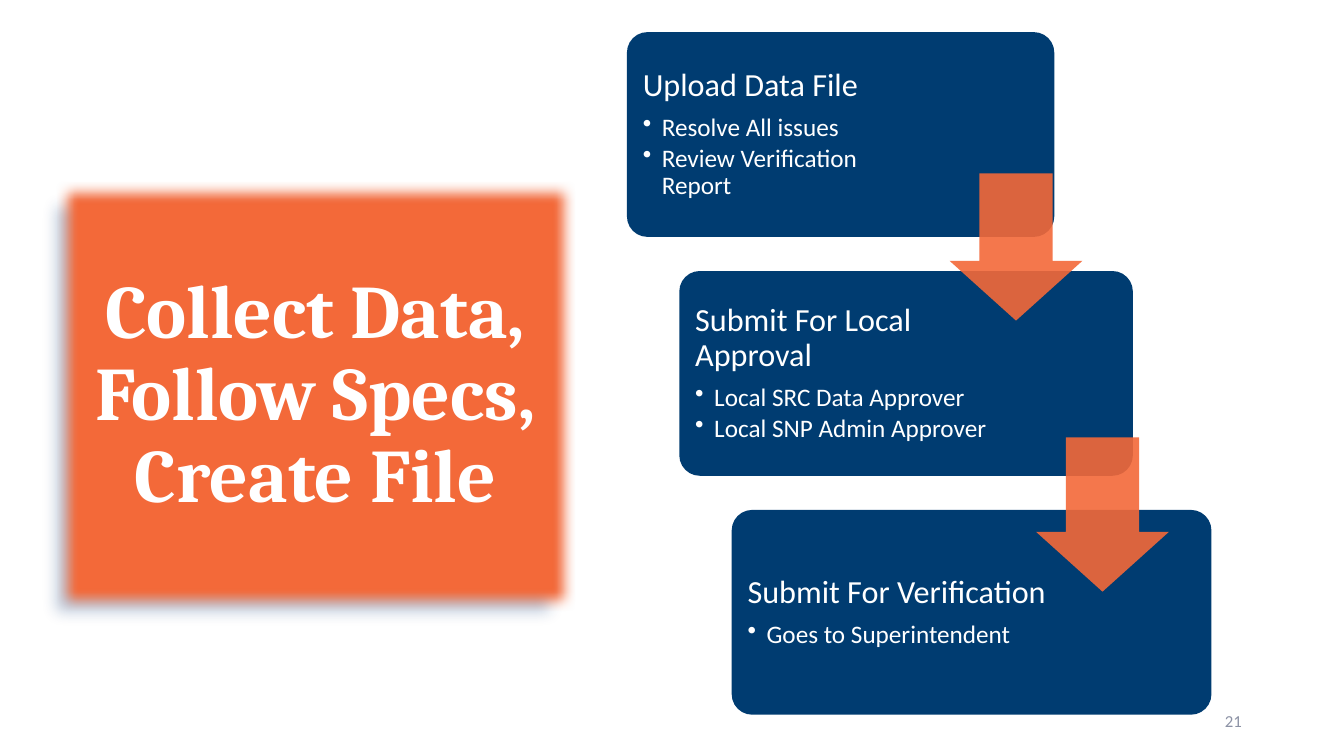
from dataclasses import dataclass

import pptx
import pptx.dml.color
import pptx.enum.shapes
import pptx.enum.text
import pptx.oxml
import pptx.oxml.ns
import pptx.util
from pptx.util import Cm, Pt

SHAPE = pptx.enum.shapes.MSO_SHAPE
ALIGN = pptx.enum.text.PP_ALIGN
ANCHOR = pptx.enum.text.MSO_ANCHOR
qn = pptx.oxml.ns.qn


@dataclass(frozen=True)
class Theme:
    navy: str = "003C71"
    orange: str = "F36939"
    white: str = "FFFFFF"
    gray: str = "8C92A5"
    shadow: str = "1A4480"
    body_font: str = "Calibri"
    title_font: str = "Cambria"
    title_size: int = 54
    heading_size: int = 23
    bullet_size: int = 18
    number_size: int = 12


THEME = Theme()

# heading, bullets, width of the text column in cm
STEPS = [
    ("Upload Data File",
     ["Resolve All issues", "Review Verification Report"], 7.44),
    ("Submit For Local Approval",
     ["Local SRC Data Approver", "Local SNP Admin Approver"], 8.08),
    ("Submit For Verification", ["Goes to Superintendent"], 8.56),
]
# left, top, width, height in cm, relative to the staircase
ARROWS = [(8.13, 3.56, 3.35, 3.71), (10.31, 10.21, 3.35, 3.89)]


def rgb(color):
    return pptx.dml.color.RGBColor.from_string(color)


def add_effect_xml(parent, xml):
    namespace = pptx.oxml.ns.nsdecls("a")
    parent.append(pptx.oxml.parse_xml(xml.replace(" ", f" {namespace} ", 1)))


def set_opacity(color_parent, percent):
    color = next(color_parent.iter(qn("a:srgbClr")))
    add_effect_xml(color, f'<a:alpha val="{percent * 1000}"/>')


def add_filled(slide, kind, box, color, adjustments=()):
    """Add a flat preset shape without an outline."""
    shape = slide.shapes.add_shape(kind, *box)
    shape.shadow.inherit = False
    shape.fill.solid()
    shape.fill.fore_color.rgb = rgb(color)
    shape.line.fill.background()
    for index, value in enumerate(adjustments):
        shape.adjustments[index] = value
    return shape


def prepare_frame(frame, inset):
    frame.word_wrap = True
    frame.auto_size = pptx.enum.text.MSO_AUTO_SIZE.NONE
    frame.vertical_anchor = ANCHOR.MIDDLE
    frame.margin_left = frame.margin_right = inset
    frame.margin_top = frame.margin_bottom = inset


def add_run(paragraph, text, font, size, color, bold=False):
    run = paragraph.add_run()
    run.text = text
    run.font.name = font
    run.font.size = Pt(size)
    run.font.bold = bold
    run.font.color.rgb = rgb(color)


def set_spacing(paragraph, after_percent):
    """Set tight lines and a space after in percent of the type size."""
    paragraph.line_spacing = 0.9
    paragraph.space_before = Pt(0)
    paragraph.space_after = Pt(0)
    after = next(paragraph._p.iter(qn("a:spcAft")))
    after.remove(after[0])
    add_effect_xml(after, f'<a:spcPct val="{after_percent * 1000}"/>')


def add_bullet(paragraph):
    properties = paragraph._p.get_or_add_pPr()
    properties.set("marL", str(Cm(0.48)))
    properties.set("indent", str(-Cm(0.48)))
    add_effect_xml(properties, '<a:buChar char="•"/>')


def add_step(slide, left, top, width, height, step):
    heading, bullets, text_width = step
    add_filled(slide, SHAPE.ROUNDED_RECTANGLE, (left, top, width, height),
               THEME.navy, [0.1])
    pad = Cm(0.15)
    frame = slide.shapes.add_textbox(
        left + pad, top + pad, Cm(text_width), height - 2 * pad).text_frame
    prepare_frame(frame, Cm(0.25))
    paragraph = frame.paragraphs[0]
    set_spacing(paragraph, 35)
    add_run(paragraph, heading, THEME.body_font, THEME.heading_size, THEME.white)
    for bullet in bullets:
        paragraph = frame.add_paragraph()
        paragraph.level = 1
        set_spacing(paragraph, 15)
        add_bullet(paragraph)
        add_run(paragraph, bullet, THEME.body_font, THEME.bullet_size, THEME.white)


def add_staircase(slide, left, top, width, height):
    """Step three cards down to the right and join them with arrows."""
    card_height = Cm(5.16)
    pitch = (height - card_height) // (len(STEPS) - 1)
    indent, growth = Cm(1.32), Cm(0.66)
    last = len(STEPS) - 1
    first_width = width - last * (indent + growth)
    for index, step in enumerate(STEPS):
        add_step(slide, left + index * indent, top + index * pitch,
                 first_width + index * growth, card_height, step)
    for x, y, arrow_width, arrow_height in ARROWS:
        box = (left + Cm(x), top + Cm(y), Cm(arrow_width), Cm(arrow_height))
        arrow = add_filled(slide, SHAPE.DOWN_ARROW, box, THEME.orange)
        arrow.adjustments[0] = 0.45
        arrow.adjustments[1] = 0.45
        arrow.adjustments[0] = 0.55
        set_opacity(arrow._element.spPr, 90)


def add_title_card(slide, left, top, width, height):
    """Put the title on a soft-edged card with a shadow."""
    box = (left, top, width, height)
    card = add_filled(slide, SHAPE.FLOWCHART_PROCESS, box, THEME.orange)
    card.line.color.rgb = rgb(THEME.white)
    card.line.width = Pt(1)
    set_opacity(card._element.spPr.find(qn("a:ln")), 97)
    effects = card._element.spPr.find(qn("a:effectLst"))
    add_effect_xml(effects, (
        f'<a:outerShdw blurRad="{Pt(4)}" dist="{Pt(13)}" dir="8100000">'
        f'<a:srgbClr val="{THEME.shadow}"><a:alpha val="40000"/></a:srgbClr>'
        '</a:outerShdw>'))
    add_effect_xml(effects, f'<a:softEdge rad="{Pt(9)}"/>')

    title = slide.shapes.title
    card._element.addnext(title._element)
    title.left, title.top, title.width, title.height = box
    prepare_frame(title.text_frame, Cm(0.1))
    paragraph = title.text_frame.paragraphs[0]
    paragraph.alignment = ALIGN.CENTER
    set_spacing(paragraph, 35)
    add_run(paragraph, "Collect Data, Follow Specs, Create File",
            THEME.title_font, THEME.title_size, THEME.white, bold=True)


def add_slide_number(slide, left, top, width, height):
    frame = slide.shapes.add_textbox(left, top, width, height).text_frame
    prepare_frame(frame, Cm(0.25))
    paragraph = frame.paragraphs[0]
    paragraph.alignment = ALIGN.RIGHT
    add_run(paragraph, "21", THEME.body_font, THEME.number_size, THEME.gray)


def main():
    deck = pptx.Presentation()
    deck.slide_width, deck.slide_height = Cm(33.87), Cm(19.05)
    slide = deck.slides.add_slide(deck.slide_layouts.get_by_name("Title Only"))
    add_slide_number(slide, Cm(23.93), Cm(17.65), Cm(7.62), Cm(1.02))
    add_staircase(slide, Cm(15.8), Cm(0.81), Cm(14.73), Cm(17.2))
    add_title_card(slide, Cm(1.42), Cm(4.57), Cm(13.06), Cm(10.82))
    deck.save("out.pptx")


if __name__ == "__main__":
    main()
